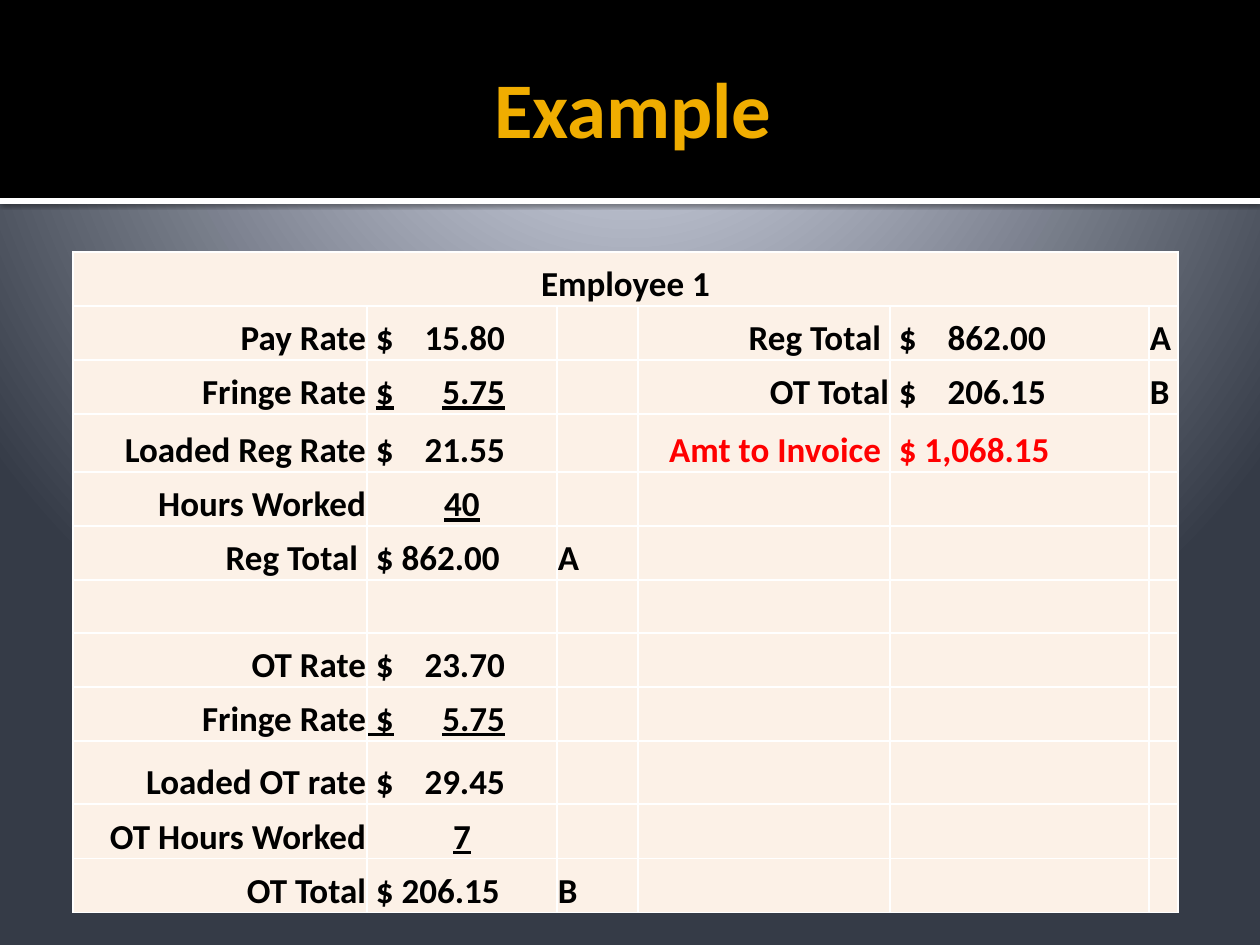
from pptx import Presentation, util as u
from pptx.dml.color import RGBColor
from pptx.enum import shapes, text
from pptx.oxml import parse_xml
from pptx.oxml.ns import nsdecls, qn

EMU_PER_PX = 914400 / 126
FONT = "Calibri"
BLACK, WHITE, RED, GOLD, CREAM = "000000", "FFFFFF", "FF0000", "F0AD00", "FCF1E7"
LEFT, CENTER, RIGHT = text.PP_ALIGN.LEFT, text.PP_ALIGN.CENTER, text.PP_ALIGN.RIGHT

COLUMN_WIDTHS = [294, 190, 81, 252, 259, 29]
ROW_HEIGHTS = [54, 54, 54, 58, 54, 54, 53, 54, 54, 63, 55, 54]
COLUMN_ALIGNMENTS = [RIGHT, LEFT, LEFT, RIGHT, LEFT, LEFT]
AMOUNT_TABS = {1: 137, 4: 155}
UNDERLINE_MARK = "|"
PAY_ROWS = [
    ["Employee 1"],
    ["Pay Rate", " $\t15.80", "", " Reg Total ", " $\t862.00", "A"],
    ["Fringe Rate", " |$\t5.75", "", "OT Total", " $\t206.15", "B"],
    ["Loaded Reg Rate", " $\t21.55", "", "Amt to Invoice ", " $ 1,068.15"],
    ["Hours Worked", "|40"],
    [" Reg Total ", " $ 862.00", "A"],
    [],
    ["OT Rate", " $\t23.70"],
    ["Fringe Rate", "| $\t5.75"],
    ["Loaded OT rate", " $\t29.45"],
    ["OT Hours Worked", "|7"],
    ["OT Total", " $ 206.15", "B"],
]
CENTERED_CELLS = {(0, 0), (4, 1), (10, 1)}
INVOICE_CELLS = {(3, 3), (3, 4)}


def px(length):
    return u.Emu(round(length * EMU_PER_PX))


def color(value):
    return RGBColor.from_string(value)


def format_run(run, size, value):
    run.font.name = FONT
    run.font.size = u.Pt(size)
    run.font.bold = True
    run.font.color.rgb = color(value)


def paint_background(slide):
    slide.background.fill.solid()
    properties = slide.element.find(".//" + qn("p:bgPr"))
    stops = "".join(
        f'<a:gs pos="{position * 1000}"><a:srgbClr val="{value}"/></a:gs>'
        for position, value in [(0, "C1C5D3"), (12, "C1C5D3"), (20, "BFC4D2"), (100, "353B47")]
    )
    gradient = parse_xml(
        f'<a:gradFill {nsdecls("a")} rotWithShape="1"><a:gsLst>{stops}</a:gsLst>'
        '<a:path path="circle"><a:fillToRect l="10000" t="-25000" r="10000" b="125000"/>'
        "</a:path></a:gradFill>"
    )
    properties.replace(properties[0], gradient)


def add_band(slide, left, top, width, height, value):
    band = slide.shapes.add_shape(
        shapes.MSO_SHAPE.RECTANGLE, px(left), px(top), px(width), px(height)
    )
    band.shadow.inherit = False
    band.fill.solid()
    band.fill.fore_color.rgb = color(value)
    band.line.fill.background()
    return band


def add_header(slide, left, top, width, height):
    rule = add_band(slide, left, top + height, width, 6, WHITE)
    effects = rule.element.spPr.find(qn("a:effectLst"))
    effects.append(parse_xml(
        f'<a:outerShdw {nsdecls("a")} blurRad="31750" dist="10160" dir="5400000">'
        f'<a:srgbClr val="{BLACK}"><a:alpha val="60000"/></a:srgbClr></a:outerShdw>'
    ))
    add_band(slide, left, top, width, height, BLACK)
    title = slide.shapes.add_textbox(px(left + 63), px(top + 21), px(width - 126), px(173))
    frame = title.text_frame
    frame.word_wrap = True
    frame.vertical_anchor = text.MSO_ANCHOR.MIDDLE
    frame.margin_right = u.Inches(0.05)
    frame.text = "Example"
    paragraph = frame.paragraphs[0]
    paragraph.alignment = CENTER
    format_run(paragraph.runs[0], 45, GOLD)


def style_cell(cell):
    cell.margin_left = cell.margin_right = cell.margin_top = px(1)
    cell.margin_bottom = 0
    cell.vertical_anchor = text.MSO_ANCHOR.BOTTOM
    properties = cell._tc.get_or_add_tcPr()
    for side in ("lnL", "lnR", "lnT", "lnB"):
        properties.append(parse_xml(
            f'<a:{side} {nsdecls("a")} w="12700"><a:solidFill>'
            f'<a:srgbClr val="{WHITE}"/></a:solidFill></a:{side}>'
        ))
    cell.fill.solid()
    cell.fill.fore_color.rgb = color(CREAM)


def write_cell(cell, content, alignment, value, tab):
    paragraph = cell.text_frame.paragraphs[0]
    paragraph.alignment = alignment
    plain, _, underlined = content.partition(UNDERLINE_MARK)
    for wording, underline in ((plain, False), (underlined, True)):
        if wording:
            run = paragraph.add_run()
            run.text = wording
            format_run(run, 20, value)
            run.font.underline = underline
    if "\t" in content:
        paragraph._p.get_or_add_pPr().append(parse_xml(
            f'<a:tabLst {nsdecls("a")}><a:tab pos="{px(tab)}" algn="r"/></a:tabLst>'
        ))


def add_pay_table(slide, left, top):
    frame = slide.shapes.add_table(
        len(ROW_HEIGHTS), len(COLUMN_WIDTHS), px(left), px(top),
        px(sum(COLUMN_WIDTHS)), px(sum(ROW_HEIGHTS)),
    )
    table = frame.table
    table.first_row = table.horz_banding = False
    for column, width in zip(table.columns, COLUMN_WIDTHS):
        column.width = px(width)
    for row, height in zip(table.rows, ROW_HEIGHTS):
        row.height = px(height)
        for cell in row.cells:
            style_cell(cell)
    table.cell(0, 0).merge(table.cell(0, len(COLUMN_WIDTHS) - 1))
    for row_index, contents in enumerate(PAY_ROWS):
        for column_index, content in enumerate(contents):
            place = (row_index, column_index)
            alignment = CENTER if place in CENTERED_CELLS else COLUMN_ALIGNMENTS[column_index]
            value = RED if place in INVOICE_CELLS else BLACK
            write_cell(table.cell(*place), content, alignment, value, AMOUNT_TABS.get(column_index))


def main():
    presentation = Presentation()
    presentation.slide_width, presentation.slide_height = px(1260), px(945)
    slide = presentation.slides.add_slide(presentation.slide_layouts[6])
    paint_background(slide)
    add_header(slide, 0, 0, 1260, 198)
    add_pay_table(slide, 73, 252)
    presentation.save("out.pptx")


if __name__ == "__main__":
    main()
